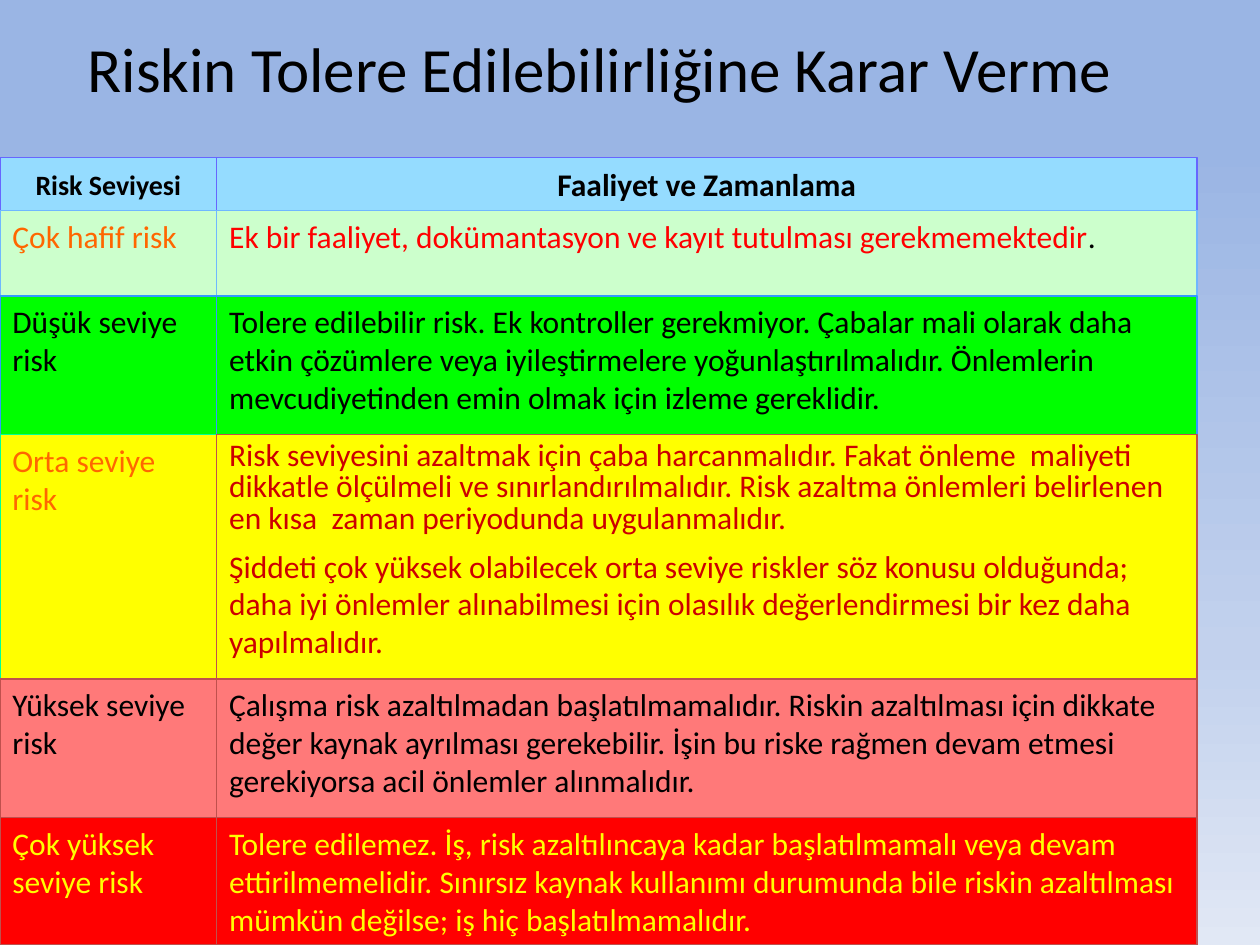
from copy import deepcopy
from dataclasses import dataclass
from itertools import accumulate

from pptx import Presentation
from pptx.dml.color import RGBColor
from pptx.enum.shapes import MSO_SHAPE
from pptx.enum.text import MSO_ANCHOR, PP_ALIGN
from pptx.oxml.ns import qn
from pptx.util import Inches, Pt


@dataclass(frozen=True)
class Theme:
    """Colours and type sizes of the slide."""
    font: str = "Calibri"
    title_size: int = 36
    body_size: int = 18
    label_size: int = 16
    border_width: float = 0.75
    black: str = "000000"
    orange: str = "FF6600"
    red: str = "FF0000"
    dark_red: str = "CC0000"
    yellow: str = "FFFF00"
    brick: str = "C0504D"
    header: str = "95DCFF"
    header_border: str = "6666FF"
    mint: str = "CCFFCC"
    mint_border: str = "6FB7FF"
    green: str = "00FF00"
    green_border: str = "3399FF"
    yellow_border: str = "00FF99"
    salmon: str = "FF7979"
    backdrop: tuple = ((0.15, "9AB5E4"), (0.69, "C2D1ED"), (1, "E1E8F5"))


@dataclass(frozen=True)
class Box:
    """A region in inches."""
    left: float
    top: float
    width: float
    height: float

    def emu(self):
        """Return the region as slide lengths."""
        return [Inches(n) for n in (self.left, self.top, self.width, self.height)]


@dataclass(frozen=True)
class Level:
    """One row: fill, a border and ink for each column, and the wording."""
    height: float
    fill: str
    borders: tuple
    inks: tuple
    texts: tuple


THEME = Theme()
SLIDE = Box(0, 0, 10, 7.5)
COLUMNS = (0.172 * SLIDE.width, 0.778 * SLIDE.width)

HEADER = Level(0.42, THEME.header, (THEME.header_border,) * 2, (THEME.black,) * 2,
               ("Risk Seviyesi", "Faaliyet ve Zamanlama"))
LEVELS = (
    Level(0.68, THEME.mint, (THEME.mint_border,) * 2, (THEME.orange, THEME.red), (
        "Çok hafif risk",
        [[("Ek bir faaliyet, dokümantasyon ve kayıt tutulması gerekmemektedir", THEME.red),
          (".", THEME.black)]])),
    Level(1.1, THEME.green, (THEME.green_border,) * 2, (THEME.black,) * 2, (
        "Düşük seviye risk",
        "Tolere edilebilir risk. Ek kontroller gerekmiyor. Çabalar mali olarak daha etkin "
        "çözümlere veya iyileştirmelere yoğunlaştırılmalıdır. Önlemlerin mevcudiyetinden "
        "emin olmak için izleme gereklidir.")),
    Level(1.94, THEME.yellow, (THEME.yellow_border, THEME.brick),
          (THEME.orange, THEME.dark_red), (
        "Orta seviye risk",
        ["Risk seviyesini azaltmak için çaba harcanmalıdır. Fakat önleme  maliyeti dikkatle "
         "ölçülmeli ve sınırlandırılmalıdır. Risk azaltma önlemleri belirlenen en kısa  zaman "
         "periyodunda uygulanmalıdır.",
         "Şiddeti çok yüksek olabilecek orta seviye riskler söz konusu olduğunda; daha iyi "
         "önlemler alınabilmesi için olasılık değerlendirmesi bir kez daha yapılmalıdır."])),
    Level(1.1, THEME.salmon, (THEME.brick,) * 2, (THEME.black,) * 2, (
        "Yüksek seviye risk",
        "Çalışma risk azaltılmadan başlatılmamalıdır. Riskin azaltılması için dikkate değer "
        "kaynak ayrılması gerekebilir. İşin bu riske rağmen devam etmesi gerekiyorsa acil "
        "önlemler alınmalıdır.")),
    Level(1.01, THEME.red, (THEME.brick,) * 2, (THEME.yellow,) * 2, (
        "Çok yüksek seviye risk",
        "Tolere edilemez. İş, risk azaltılıncaya kadar başlatılmamalı veya devam "
        "ettirilmemelidir. Sınırsız kaynak kullanımı durumunda bile riskin azaltılması "
        "mümkün değilse; iş hiç başlatılmamalıdır.")),
)


def write(frame, text, *, size=THEME.body_size, color=THEME.black, bold=False,
          align=PP_ALIGN.LEFT, anchor=MSO_ANCHOR.TOP):
    """Fill a text frame with a string or with paragraphs of coloured runs."""
    frame.word_wrap = True
    frame.vertical_anchor = anchor
    paragraphs = [text] if isinstance(text, str) else text
    for index, wording in enumerate(paragraphs):
        paragraph = frame.add_paragraph() if index else frame.paragraphs[0]
        paragraph.alignment = align
        for part, ink in [(wording, color)] if isinstance(wording, str) else wording:
            run = paragraph.add_run()
            run.text = part
            run.font.name, run.font.size, run.font.bold = THEME.font, Pt(size), bold
            run.font.color.rgb = RGBColor.from_string(ink)


def paint_backdrop(slide):
    """Give the slide its vertical gradient."""
    fill = slide.background.fill
    fill.gradient()
    fill.gradient_angle = 270
    stops = slide.element.find(".//" + qn("a:gsLst"))
    stops.append(deepcopy(stops[-1]))
    for stop, (position, color) in zip(fill.gradient_stops, THEME.backdrop):
        stop.position = position
        stop.color.rgb = RGBColor.from_string(color)


def add_heading(slide, box):
    """Place the slide title."""
    heading = slide.shapes.add_textbox(*box.emu())
    write(heading.text_frame, "Riskin Tolere Edilebilirliğine Karar Verme",
          size=THEME.title_size, align=PP_ALIGN.CENTER, anchor=MSO_ANCHOR.MIDDLE)


def add_cell(grid, box, fill, border, text, **style):
    """Place one bordered cell and return its text frame."""
    cell = grid.shapes.add_shape(MSO_SHAPE.RECTANGLE, *box.emu())
    cell.shadow.inherit = False
    cell.fill.solid()
    cell.fill.fore_color.rgb = RGBColor.from_string(fill)
    cell.line.color.rgb = RGBColor.from_string(border)
    cell.line.width = Pt(THEME.border_width)
    write(cell.text_frame, text, **style)
    return cell.text_frame


def add_risk_grid(slide, box):
    """Place the risk levels and their actions, column by column."""
    grid = slide.shapes.add_group_shape()
    rows = (HEADER, *LEVELS)
    lefts = accumulate(COLUMNS, initial=box.left)
    tops = list(accumulate((row.height for row in rows), initial=box.top))
    for column, (left, width) in enumerate(zip(lefts, COLUMNS)):
        for row, top in zip(rows, tops):
            style = {"color": row.inks[column]}
            if row is HEADER:
                style.update(size=(THEME.label_size, THEME.body_size)[column], bold=True,
                             align=PP_ALIGN.CENTER, anchor=MSO_ANCHOR.MIDDLE)
            frame = add_cell(grid, Box(left, top, width, row.height), row.fill,
                             row.borders[column], row.texts[column], **style)
            if len(frame.paragraphs) > 1:
                lead = frame.paragraphs[0]
                lead.line_spacing = 0.84
                lead.space_before = lead.space_after = Pt(6)


def main():
    """Build and save the slide."""
    deck = Presentation()
    deck.slide_width, deck.slide_height = Inches(SLIDE.width), Inches(SLIDE.height)
    slide = deck.slides.add_slide(deck.slide_layouts[6])
    paint_backdrop(slide)
    add_heading(slide, Box(0.27, 0, 8.98, 1.07))
    add_risk_grid(slide, Box(0, SLIDE.height / 6, sum(COLUMNS), SLIDE.height * 5 / 6))
    deck.save("out.pptx")


if __name__ == "__main__":
    main()
